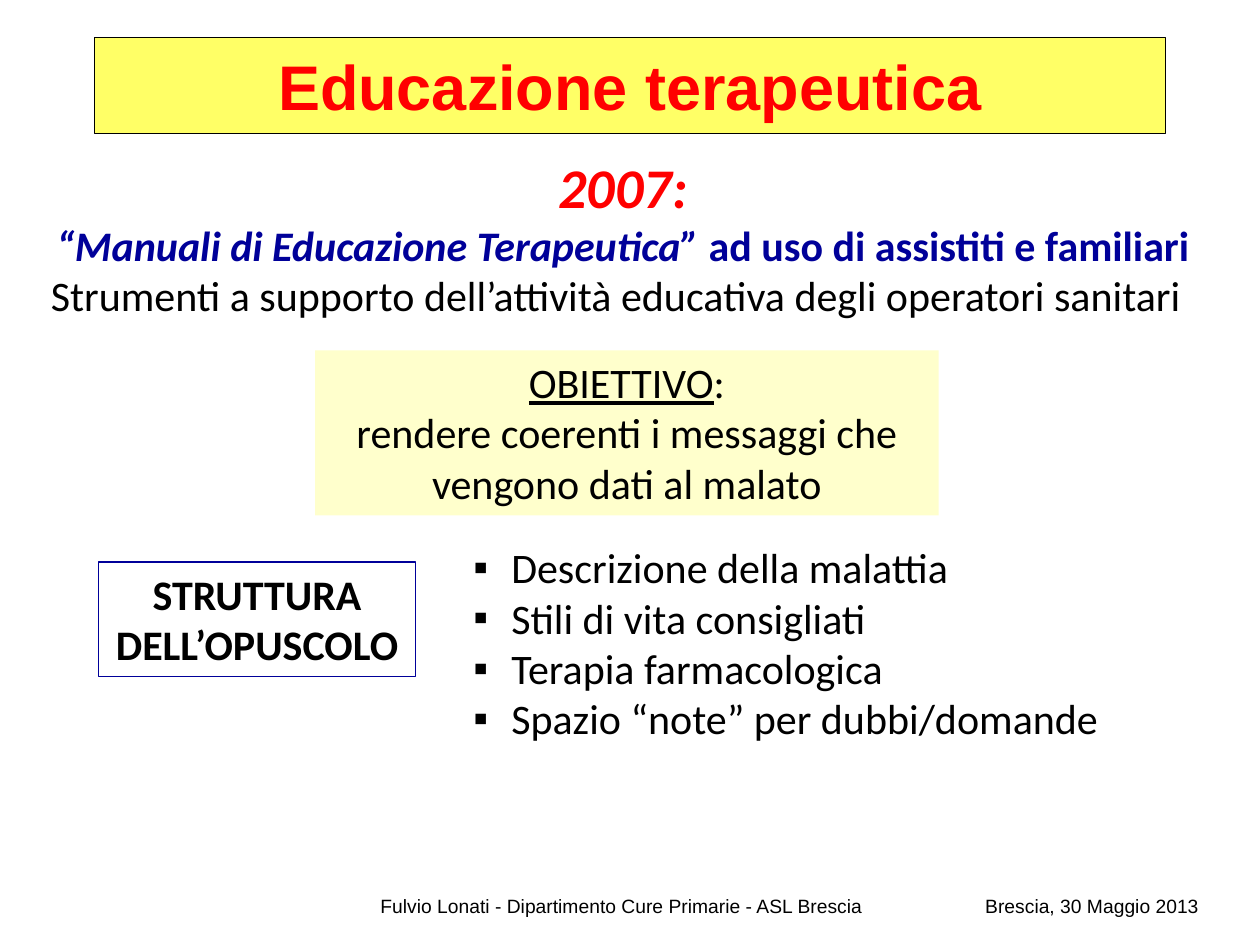
from lxml import etree
from pptx import Presentation
from pptx import util as u
from pptx.dml.color import RGBColor
from pptx.enum import shapes, text
from pptx.oxml import ns

RED = RGBColor(0xFF, 0x00, 0x00)
NAVY = RGBColor(0x00, 0x00, 0x99)
BLACK = RGBColor(0x00, 0x00, 0x00)
YELLOW = RGBColor(0xFF, 0xFF, 0x66)
CREAM = RGBColor(0xFF, 0xFF, 0xCC)
WHITE = RGBColor(0xFF, 0xFF, 0xFF)
CENTER, LEFT = text.PP_ALIGN.CENTER, text.PP_ALIGN.LEFT


class SlideBuilder:
    body_font = "Calibri"
    title_font = "Arial"
    body_size = 24
    line_width = 0.75

    def __init__(self, deck):
        self.page = deck.slides.add_slide(deck.slide_layouts[5])

    def paint(self, shape, fill=None, line=None):
        if fill is None:
            shape.fill.background()
        else:
            shape.fill.solid()
            shape.fill.fore_color.rgb = fill
        if line is None:
            shape.line.fill.background()
        else:
            shape.line.color.rgb = line
            shape.line.width = u.Pt(self.line_width)

    def style_span(self, span, size=None, font=None, color=BLACK,
                   bold=False, italic=False, underline=False):
        span.font.size = u.Pt(size or self.body_size)
        span.font.name = font or self.body_font
        span.font.color.rgb = color
        span.font.bold = bold
        span.font.italic = italic
        span.font.underline = underline

    def fill_text(self, frame, lines, align=CENTER):
        frame.word_wrap = True
        for index, spans in enumerate(lines):
            para = frame.paragraphs[0] if index == 0 else frame.add_paragraph()
            para.alignment = align
            for words, styles in spans:
                span = para.add_run()
                span.text = words
                self.style_span(span, **styles)

    def title(self, words, left, top, width, height):
        box = self.page.shapes.title
        box.left, box.top, box.width, box.height = map(u.Pt, (left, top, width, height))
        self.paint(box, YELLOW, BLACK)
        frame = box.text_frame
        frame.vertical_anchor = text.MSO_ANCHOR.MIDDLE
        self.fill_text(frame, [[(words, dict(size=36, font=self.title_font, color=RED, bold=True))]])

    def panel(self, lines, left, top, width, height, fill=None, line=None):
        box = self.page.shapes.add_shape(
            shapes.MSO_SHAPE.RECTANGLE, *map(u.Pt, (left, top, width, height)))
        box.shadow.inherit = False
        self.paint(box, fill, line)
        box.text_frame.vertical_anchor = text.MSO_ANCHOR.TOP
        self.fill_text(box.text_frame, lines)
        return box

    def bullets(self, items, left, top, width, height, indent=21.6):
        box = self.page.shapes.add_textbox(*map(u.Pt, (left, top, width, height)))
        self.fill_text(box.text_frame, [[(item, {})] for item in items], LEFT)
        for para in box.text_frame.paragraphs:
            props = para._p.get_or_add_pPr()
            props.set("marL", str(u.Pt(indent)))
            props.set("indent", str(-u.Pt(indent)))
            etree.SubElement(props, ns.qn("a:buFont"), typeface="Arial")
            etree.SubElement(props, ns.qn("a:buChar"), char="▪")

    def footer(self, words, left, top, width, height, tab):
        box = self.page.shapes.add_textbox(*map(u.Pt, (left, top, width, height)))
        box.text_frame.margin_left = 0
        self.fill_text(box.text_frame, [[(words, dict(size=11, font=self.title_font))]], LEFT)
        props = box.text_frame.paragraphs[0]._p.get_or_add_pPr()
        stops = etree.SubElement(props, ns.qn("a:tabLst"))
        etree.SubElement(stops, ns.qn("a:tab"), pos=str(u.Pt(tab)), algn="l")


def main():
    deck = Presentation()
    deck.slide_width, deck.slide_height = u.Pt(720), u.Pt(540)
    slide = SlideBuilder(deck)

    slide.title("Educazione terapeutica", 54, 21.6, 612, 54.7)

    intro = slide.panel([
        [("2007:", dict(size=32, color=RED, bold=True, italic=True))],
        [("“Manuali di Educazione Terapeutica” ", dict(color=NAVY, bold=True, italic=True)),
         ("ad uso di assistiti e familiari", dict(color=NAVY, bold=True))],
        [("Strumenti a supporto dell’attività educativa degli operatori sanitari", {})],
    ], 16.6, 83.5, 679, 104.4, fill=WHITE)
    support = intro.text_frame.paragraphs[2]
    support.alignment = LEFT
    support._p.get_or_add_pPr().set("marL", str(u.Pt(5.4)))

    slide.panel([[("STRUTTURA DELL’OPUSCOLO", dict(bold=True))]],
                56.2, 321.1, 181.4, 65.5, line=NAVY)

    slide.panel([
        [("OBIETTIVO", dict(underline=True)), (":", {})],
        [("rendere coerenti i messaggi che vengono dati al malato", {})],
    ], 180, 200.2, 356.4, 94.3, fill=CREAM)

    slide.bullets([
        "Descrizione della malattia",
        "Stili di vita consigliati",
        "Terapia farmacologica",
        "Spazio “note” per dubbi/domande",
    ], 263.5, 306, 424.8, 123.8)

    slide.footer("Fulvio Lonati - Dipartimento Cure Primarie - ASL Brescia\tBrescia, 30 Maggio 2013",
                 217.4, 507.6, 502.6, 25.2, tab=345.6)

    deck.save("out.pptx")


if __name__ == "__main__":
    main()
